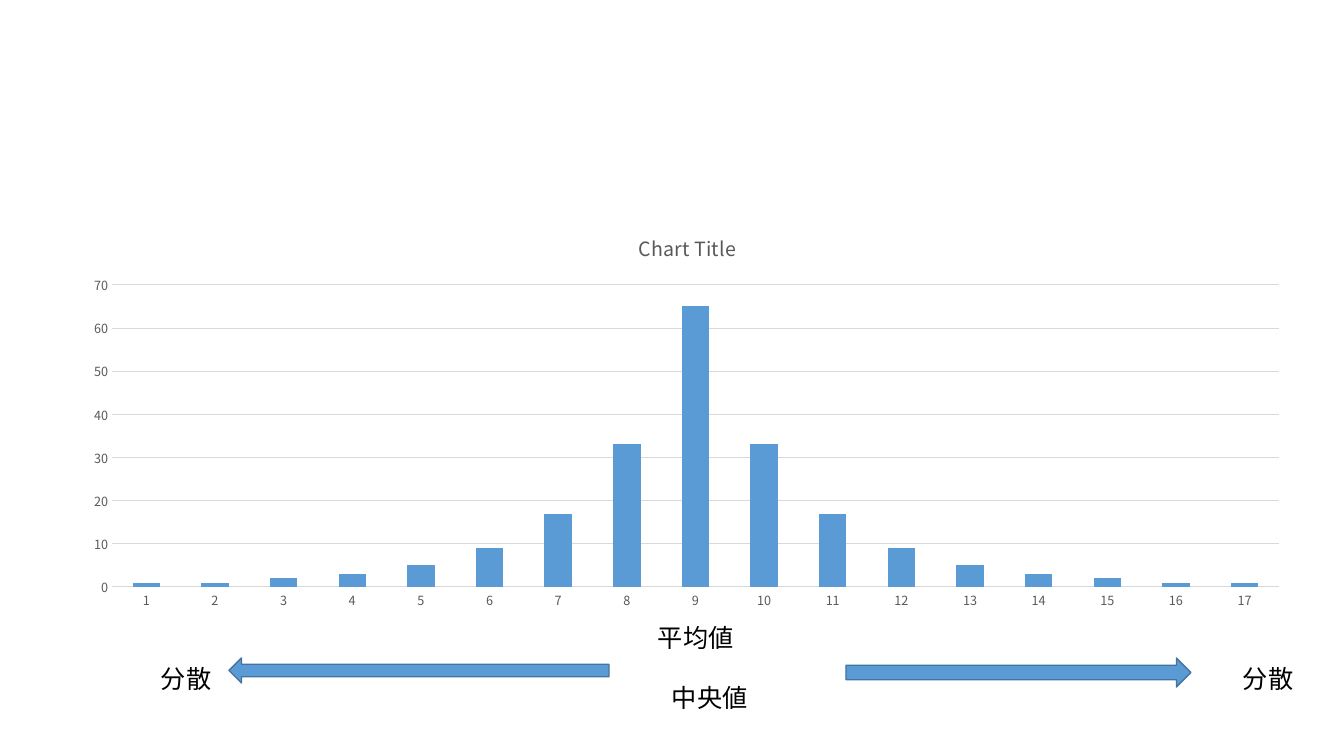
from dataclasses import dataclass

from lxml.etree import SubElement
from pptx import Presentation
from pptx.chart.data import CategoryChartData
from pptx.dml.color import RGBColor
from pptx.enum.chart import XL_CHART_TYPE, XL_TICK_MARK
from pptx.enum.shapes import MSO_SHAPE
from pptx.enum.text import MSO_AUTO_SIZE
from pptx.oxml.ns import qn
from pptx.util import Emu, Pt


@dataclass(frozen=True)
class Theme:
    font: str = "Noto Sans CJK JP"
    ink: str = "000000"
    gray: str = "595959"
    grid: str = "D9D9D9"
    blue: str = "5B9BD5"
    edge: str = "43739E"
    label: int = 18
    title: int = 14
    base: int = 10
    tick: int = 9


@dataclass(frozen=True)
class Box:
    left: int
    top: int
    width: int
    height: int

    def emu(self) -> tuple[Emu, ...]:
        return tuple(px(n) for n in (self.left, self.top, self.width, self.height))


@dataclass(frozen=True)
class Label:
    text: str
    box: Box


@dataclass(frozen=True)
class Arrow:
    kind: MSO_SHAPE
    box: Box


THEME = Theme()
SCALE = 914400 / 100.8  # EMU in one px

RISE = [1, 1, 2, 3, 5, 9, 17, 33]
COUNTS = RISE + [65] + RISE[::-1]
CHART = Box(70, 214, 1235, 403)
PLOT = Box(112, 285, 1167, 302)

LABELS = [
    Label("平均値", Box(648, 617, 97, 40)),
    Label("中央値", Box(662, 677, 97, 40)),
    Label("分散", Box(151, 658, 72, 40)),
    Label("分散", Box(1233, 658, 72, 40)),
]
ARROWS = [
    Arrow(MSO_SHAPE.RIGHT_ARROW, Box(846, 658, 345, 29)),
    Arrow(MSO_SHAPE.LEFT_ARROW, Box(229, 658, 380, 25)),
]


def px(n: int) -> Emu:
    return Emu(round(n * SCALE))


def put(item, values: dict) -> None:
    for name, value in values.items():
        setattr(item, name, value)


def style(font, size: int, color: str) -> None:
    put(font, {"name": THEME.font, "size": Pt(size), "bold": False})
    font.color.rgb = RGBColor.from_string(color)


def stroke(line, color: str, width: float) -> None:
    line.color.rgb = RGBColor.from_string(color)
    line.width = Pt(width)


def paint(fill, color: str) -> None:
    fill.solid()
    fill.fore_color.rgb = RGBColor.from_string(color)


def place(chart) -> None:
    """Fix the inner plot area as shares of the chart frame."""
    area = chart._chartSpace.chart.plotArea
    old = area.find(qn("c:layout"))
    if old is not None:
        area.remove(old)
    layout = SubElement(area, qn("c:layout"))
    area.insert(0, layout)
    manual = SubElement(layout, qn("c:manualLayout"))
    parts = {
        "layoutTarget": "inner",
        "xMode": "edge",
        "yMode": "edge",
        "x": (PLOT.left - CHART.left) / CHART.width,
        "y": (PLOT.top - CHART.top) / CHART.height,
        "w": PLOT.width / CHART.width,
        "h": PLOT.height / CHART.height,
    }
    for name, value in parts.items():
        SubElement(manual, qn(f"c:{name}")).set("val", str(value))


def add_bars(slide) -> None:
    data = CategoryChartData()
    data.categories = [str(n) for n in range(1, len(COUNTS) + 1)]
    data.add_series("Series 1", COUNTS)
    chart = slide.shapes.add_chart(
        XL_CHART_TYPE.COLUMN_STACKED, *CHART.emu(), data
    ).chart
    style(chart.font, THEME.base, THEME.ink)
    put(chart, {"has_legend": False, "has_title": True})

    # Title
    frame = chart.chart_title.text_frame
    frame.text = "Chart Title"
    style(frame.paragraphs[0].runs[0].font, THEME.title, THEME.gray)
    chart.chart_title.include_in_layout = False

    # Bars
    plot = chart.plots[0]
    put(plot, {"gap_width": 150, "overlap": 100, "vary_by_categories": False})
    paint(plot.series[0].format.fill, THEME.blue)

    # Axes
    for axis in (chart.category_axis, chart.value_axis):
        put(axis, {"major_tick_mark": XL_TICK_MARK.NONE,
                   "minor_tick_mark": XL_TICK_MARK.NONE})
        style(axis.tick_labels.font, THEME.tick, THEME.gray)
    stroke(chart.category_axis.format.line, THEME.grid, 0.75)
    axis = chart.value_axis
    put(axis, {"minimum_scale": 0, "maximum_scale": 70, "major_unit": 10,
               "has_major_gridlines": True})
    axis.format.line.fill.background()
    stroke(axis.major_gridlines.format.line, THEME.grid, 0.75)
    place(chart)


def add_label(slide, label: Label) -> None:
    frame = slide.shapes.add_textbox(*label.box.emu()).text_frame
    put(frame, {"word_wrap": False, "auto_size": MSO_AUTO_SIZE.SHAPE_TO_FIT_TEXT})
    run = frame.paragraphs[0].add_run()
    run.text = label.text
    style(run.font, THEME.label, THEME.ink)


def add_arrow(slide, arrow: Arrow) -> None:
    shape = slide.shapes.add_shape(arrow.kind, *arrow.box.emu())
    shape.shadow.inherit = False
    paint(shape.fill, THEME.blue)
    stroke(shape.line, THEME.edge, 1)


def main() -> None:
    deck = Presentation()
    put(deck, {"slide_width": px(1344), "slide_height": px(756)})
    slide = deck.slides.add_slide(deck.slide_layouts[6])
    add_bars(slide)
    for label in LABELS:
        add_label(slide, label)
    for arrow in ARROWS:
        add_arrow(slide, arrow)
    deck.save("out.pptx")


if __name__ == "__main__":
    main()
